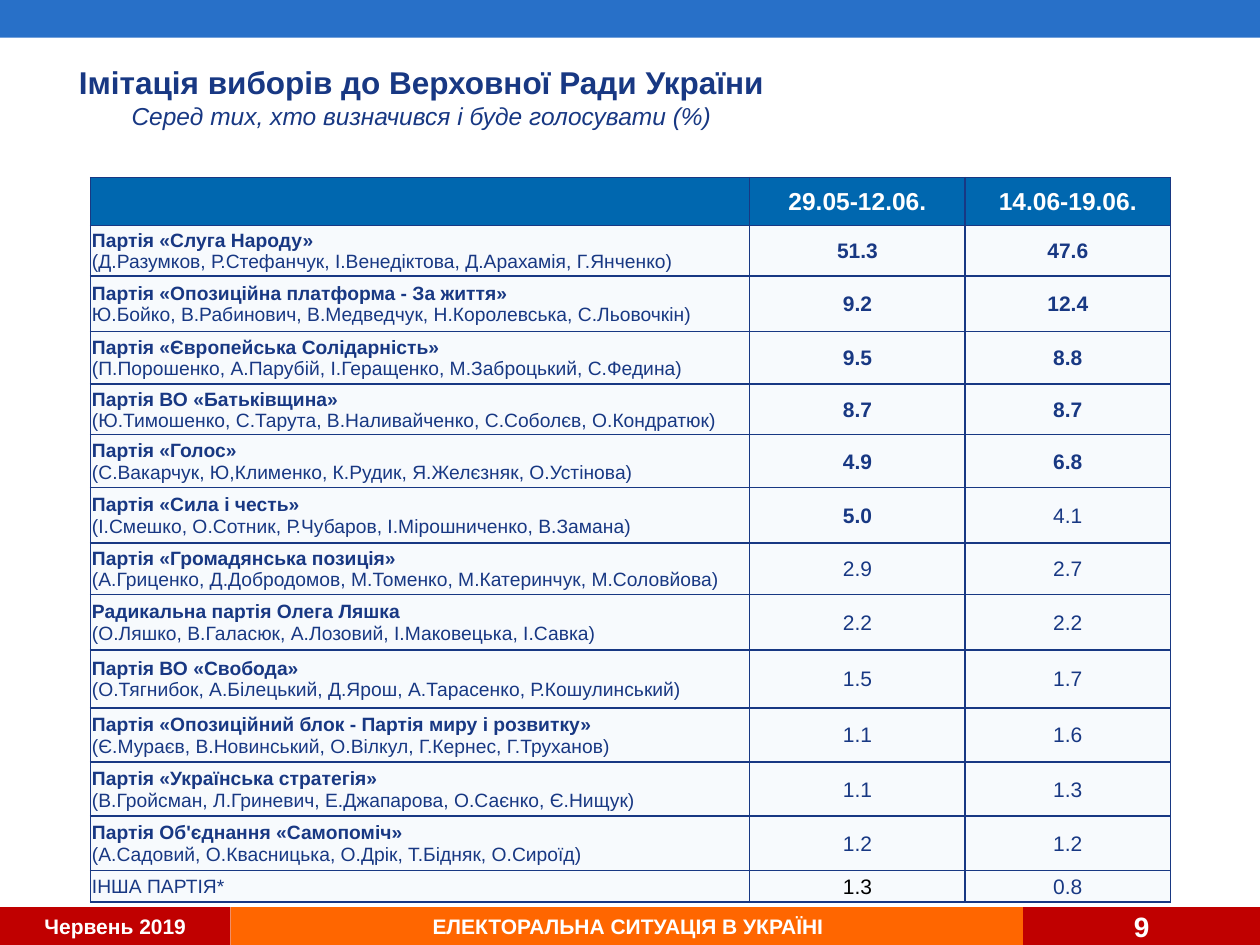
import pptx
import pptx.util
import pptx.dml.color
import pptx.enum.shapes
import pptx.enum.text
import pptx.oxml
import pptx.oxml.ns

Inches = pptx.util.Inches
Pt = pptx.util.Pt
ALIGN = pptx.enum.text.PP_ALIGN
MIDDLE = pptx.enum.text.MSO_ANCHOR.MIDDLE
COLORS = {"navy": "183883", "header": "0067AF", "cell": "F7FAFD", "top": "2870C8",
          "red": "C00000", "orange": "FF6600", "white": "FFFFFF", "black": "000000"}

# Party, leading candidates, first and second survey wave (%)
PARTIES = [
    ("Партiя «Слуга Народу»",
     "(Д.Разумков, Р.Стефанчук, І.Венедіктова, Д.Арахамія, Г.Янченко)", 51.3, 47.6),
    ("Партія «Опозицiйна платформа - За життя»",
     "Ю.Бойко, В.Рабинович, В.Медведчук, Н.Королевська, С.Льовочкін)", 9.2, 12.4),
    ("Партія «Європейська Солiдарнiсть»",
     "(П.Порошенко, А.Парубій, І.Геращенко, М.Заброцький, С.Федина)", 9.5, 8.8),
    ("Партія ВО «Батькiвщина»",
     "(Ю.Тимошенко, С.Тарута, В.Наливайченко, С.Соболєв, О.Кондратюк)", 8.7, 8.7),
    ("Партія «Голос»",
     "(С.Вакарчук, Ю,Клименко, К.Рудик, Я.Желєзняк, О.Устінова)", 4.9, 6.8),
    ("Партія «Сила і честь»",
     "(І.Смешко, О.Сотник, Р.Чубаров, І.Мірошниченко, В.Замана)", 5.0, 4.1),
    ("Партія «Громадянська позицiя»",
     "(А.Гриценко, Д.Добродомов, М.Томенко, М.Катеринчук, М.Соловйова)", 2.9, 2.7),
    ("Радикальна партiя Олега Ляшка",
     "(О.Ляшко, В.Галасюк, А.Лозовий, І.Маковецька, І.Савка)", 2.2, 2.2),
    ("Партія ВО «Свобода»",
     "(О.Тягнибок, А.Білецький, Д.Ярош, А.Тарасенко, Р.Кошулинський)", 1.5, 1.7),
    ("Партія «Опозиційний блок - Партія миру і розвитку»",
     "(Є.Мураєв, В.Новинський, О.Вілкул, Г.Кернес, Г.Труханов)", 1.1, 1.6),
    ("Партія «Українська стратегія»",
     "(В.Гройсман, Л.Гриневич, Е.Джапарова, О.Саєнко, Є.Нищук)", 1.1, 1.3),
    ("Партія Об'єднання «Самопомiч»",
     "(А.Садовий, О.Квасницька, О.Дрік, Т.Бідняк, О.Сироїд)", 1.2, 1.2),
    ("IНША ПАРТIЯ*", "", 1.3, 0.8),
]
COLUMN_WIDTHS = [5.23, 1.71, 1.63]
ROW_HEIGHTS = [0.38, 0.4, 0.44, 0.42, 0.4, 0.42, 0.44, 0.41, 0.44, 0.46, 0.43, 0.43, 0.43, 0.25]
BOLD_FROM = 4.5


def add_span(para, text, size, color, bold=False, italic=False):
    span = para.add_run()
    span.text = text
    span.font.name = "Arial"
    span.font.size = Pt(size)
    span.font.bold = bold
    span.font.italic = italic
    span.font.color.rgb = pptx.dml.color.RGBColor.from_string(COLORS[color])


def style_cell(cell, fill):
    """Set the fill, margins, anchor and thin navy borders of a table cell."""
    cell.margin_left = cell.margin_right = cell.margin_top = Inches(0.01)
    cell.margin_bottom = 0
    cell.vertical_anchor = MIDDLE
    properties = cell._tc.get_or_add_tcPr()
    for side in ("lnL", "lnR", "lnT", "lnB"):
        properties.append(pptx.oxml.parse_xml(
            f'<a:{side} {pptx.oxml.ns.nsdecls("a")} w="12700"><a:solidFill>'
            f'<a:srgbClr val="{COLORS["navy"]}"/></a:solidFill></a:{side}>'))
    cell.fill.solid()
    cell.fill.fore_color.rgb = pptx.dml.color.RGBColor.from_string(COLORS[fill])


deck = pptx.Presentation()
deck.slide_width = Inches(10)
deck.slide_height = Inches(7.5)
page = deck.slides.add_slide(deck.slide_layouts[6])

# Top band and footer
bars = [
    (0, 7.2, 1.83, "red", "Червень 2019", 12),
    (1.83, 7.2, 6.31, "orange", "ЕЛЕКТОРАЛЬНА СИТУАЦІЯ В УКРАЇНІ", 12),
    (0, 0, 10, "top", "", 12),
    (8.12, 7.2, 1.88, "red", "9", 16),
]
for left, top, width, color, text, size in bars:
    bar = page.shapes.add_shape(pptx.enum.shapes.MSO_SHAPE.RECTANGLE, Inches(left),
                                Inches(top), Inches(width), Inches(0.3))
    bar.shadow.inherit = False
    bar.fill.solid()
    bar.fill.fore_color.rgb = pptx.dml.color.RGBColor.from_string(COLORS[color])
    bar.line.fill.background()
    if text:
        bar.text_frame.vertical_anchor = MIDDLE
        para = bar.text_frame.paragraphs[0]
        para.alignment = ALIGN.CENTER
        add_span(para, text, size, "white", bold=True)

# Title
title = page.shapes.add_textbox(Inches(0.03), Inches(0.31), Inches(6.51), Inches(0.91))
title.text_frame.word_wrap = True
title.text_frame.vertical_anchor = MIDDLE
title.text_frame.margin_left = Inches(0.22)
para = title.text_frame.paragraphs[0]
para.alignment = ALIGN.CENTER
add_span(para, "Імітація виборів до Верховної Ради України", 18, "navy", bold=True)
para.add_line_break()
add_span(para, "Серед тих, хто визначився і буде голосувати (%)", 14, "navy", italic=True)

# Results table
table = page.shapes.add_table(len(ROW_HEIGHTS), len(COLUMN_WIDTHS), Inches(0.72), Inches(1.41),
                              Inches(sum(COLUMN_WIDTHS)), Inches(sum(ROW_HEIGHTS))).table
for column, width in zip(table.columns, COLUMN_WIDTHS):
    column.width = Inches(width)
for row, height in zip(table.rows, ROW_HEIGHTS):
    row.height = Inches(height)

for index, period in enumerate(["", "29.05-12.06.", "14.06-19.06."]):
    cell = table.cell(0, index)
    style_cell(cell, "header")
    if period:
        para = cell.text_frame.paragraphs[0]
        para.alignment = ALIGN.CENTER
        add_span(para, period, 14, "white", bold=True)

for row_index, (party, leaders, *shares) in enumerate(PARTIES, start=1):
    cell = table.cell(row_index, 0)
    style_cell(cell, "cell")
    add_span(cell.text_frame.paragraphs[0], party, 11, "navy", bold=bool(leaders))
    if leaders:
        add_span(cell.text_frame.add_paragraph(), leaders, 11, "navy")
    for column_index, share in enumerate(shares, start=1):
        cell = table.cell(row_index, column_index)
        style_cell(cell, "cell")
        para = cell.text_frame.paragraphs[0]
        para.alignment = ALIGN.CENTER
        color = "black" if not leaders and column_index == 1 else "navy"
        add_span(para, f"{share:.1f}", 12, color, bold=share >= BOLD_FROM)

deck.save("out.pptx")
